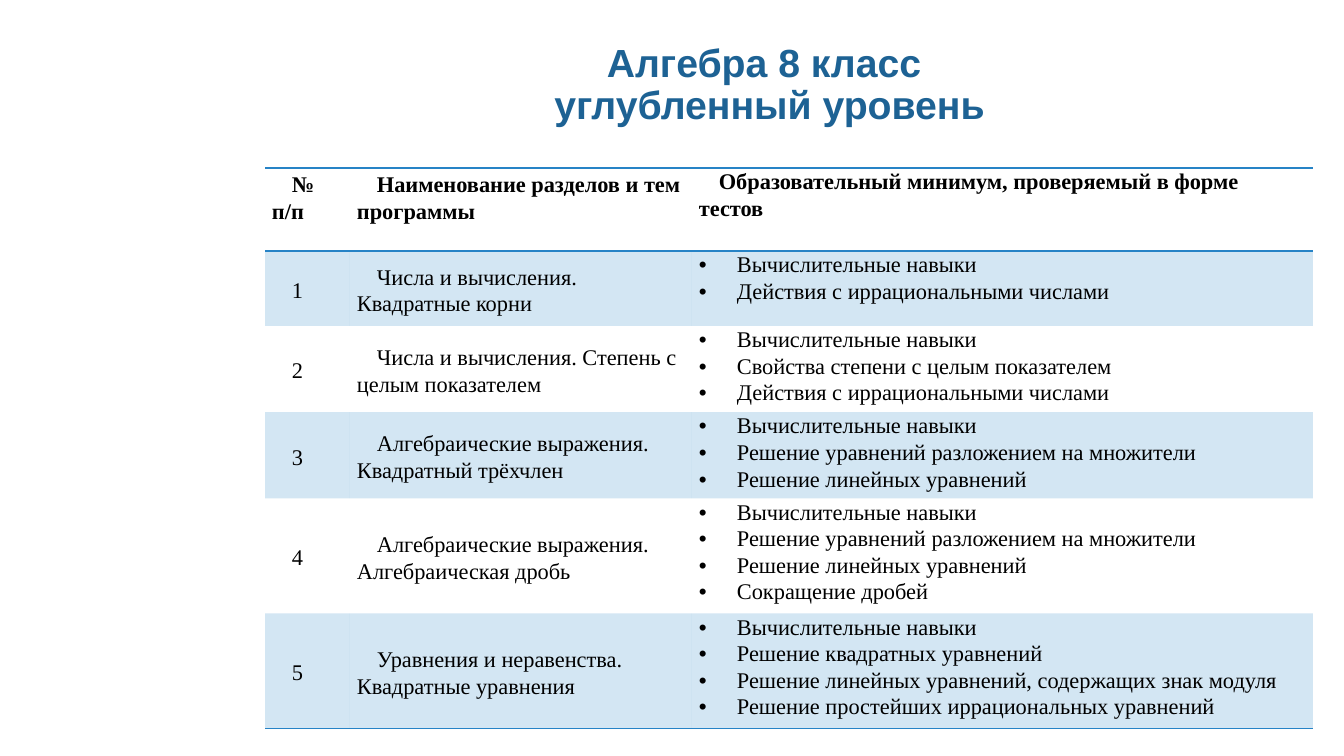
from dataclasses import dataclass

from lxml.etree import SubElement as Sub
from pptx import Presentation
from pptx.dml.color import RGBColor as Rgb
from pptx.enum.text import MSO_ANCHOR as Anchor, PP_ALIGN as Align
from pptx.oxml.ns import qn
from pptx.util import Pt

PX = 9071.43
PLAIN = "{2D5ABB26-0587-4C30-8999-92F81FD0307C}"


@dataclass(frozen=True)
class Theme:
    """Colours, fonts and type sizes of the slide."""
    title: str = "1D6294"
    ink: str = "000000"
    rule: str = "2683C6"
    head_font: str = "Arial"
    body_font: str = "Times New Roman"
    head_size: int = 28
    body_size: int = 16
    tint: int = 20000


THEME = Theme()
TITLE = [("Алгебра 8 класс", 0), ("углубленный уровень", 11)]
HEADS = ["№ п/п", "Наименование разделов и тем программы",
         "Образовательный минимум, проверяемый в форме тестов"]
SKILL = "Вычислительные навыки"
ROOTS = "Действия с иррациональными числами"
SPLIT = "Решение уравнений разложением на множители"
LINE = "Решение линейных уравнений"
TOPICS = [
    ("Числа и вычисления. Квадратные корни", [SKILL, ROOTS]),
    ("Числа и вычисления. Степень с целым показателем",
     [SKILL, "Свойства степени с целым показателем", ROOTS]),
    ("Алгебраические выражения. Квадратный трёхчлен", [SKILL, SPLIT, LINE]),
    ("Алгебраические выражения. Алгебраическая дробь",
     [SKILL, SPLIT, LINE, "Сокращение дробей"]),
    ("Уравнения и неравенства. Квадратные уравнения",
     [SKILL, "Решение квадратных уравнений", LINE + ", содержащих знак модуля",
      "Решение простейших иррациональных уравнений"]),
]
COLS = [85, 342, 621]
ROWS = [83, 75, 80, 80, 106, 106]


def px(count):
    """Turn pixels into EMU."""
    return round(count * PX)


def add_run(para, text, font, size, color, bold):
    """Add one styled run to a paragraph."""
    run = para.add_run()
    run.text = text
    run.font.name, run.font.size, run.font.bold = font, Pt(size), bold
    run.font.color.rgb = Rgb.from_string(color)


def add_paras(frame, count):
    """Yield the given number of paragraphs of a text frame."""
    for at in range(count):
        yield frame.add_paragraph() if at else frame.paragraphs[0]


def indent(para, left, first):
    """Set the left margin and first-line indent of a paragraph."""
    props = para._p.get_or_add_pPr()
    props.set("marL", str(px(left)))
    props.set("indent", str(px(first)))
    return props


def add_title(slide):
    """Add the two-line centred title."""
    box = slide.shapes.add_textbox(px(265), px(36), px(998), px(100))
    frame = box.text_frame
    frame.word_wrap = True
    frame.vertical_anchor = Anchor.MIDDLE
    for para, (text, shift) in zip(add_paras(frame, len(TITLE)), TITLE):
        indent(para, 0, shift)
        para.alignment = Align.CENTER
        para.line_spacing = 0.9
        add_run(para, text, THEME.head_font, THEME.head_size, THEME.title, True)


def fill_cell(cell, lines, bold=False, list_cell=False, anchor=Anchor.MIDDLE):
    """Write lines into a cell, as bullets when it holds a list."""
    for para, text in zip(add_paras(cell.text_frame, len(lines)), lines):
        if list_cell:
            props = indent(para, 38, -38)
            Sub(props, qn("a:buFont"), typeface="Arial")
            Sub(props, qn("a:buChar"), char="•")
        else:
            indent(para, 0, 20)
        para.line_spacing = 1.07
        add_run(para, text, THEME.body_font, THEME.body_size, THEME.ink, bold)
    cell.vertical_anchor = anchor


def style_cell(cell, sides, tinted, top):
    """Set the margins, ruled sides and fill of a cell."""
    cell.margin_left = cell.margin_right = px(7)
    cell.margin_top, cell.margin_bottom = px(top), 0
    props = cell._tc.get_or_add_tcPr()
    for side in sides:
        edge = Sub(props, qn("a:ln" + side), w=str(Pt(1)))
        Sub(Sub(edge, qn("a:solidFill")), qn("a:srgbClr"), val=THEME.rule)
    if tinted:
        cell.fill.solid()
        cell.fill.fore_color.rgb = Rgb.from_string(THEME.rule)
        color = props.find(qn("a:solidFill")).find(qn("a:srgbClr"))
        Sub(color, qn("a:alpha"), val=str(THEME.tint))
    else:
        cell.fill.background()


def add_grid(slide):
    """Add the table of topics and tested skills."""
    frame = slide.shapes.add_table(len(ROWS), len(COLS), px(265), px(168),
                                   px(sum(COLS)), px(sum(ROWS)))
    grid = frame.table
    grid.horz_banding = False
    grid._tbl.tblPr.find(qn("a:tableStyleId")).text = PLAIN
    for parts, sizes, name in ((grid.columns, COLS, "width"),
                               (grid.rows, ROWS, "height")):
        for part, size in zip(parts, sizes):
            setattr(part, name, px(size))
    for col, text in enumerate(HEADS):
        fill_cell(grid.cell(0, col), [text], bold=True, anchor=Anchor.TOP)
    for row, (topic, skills) in enumerate(TOPICS, 1):
        fill_cell(grid.cell(row, 0), [str(row)])
        fill_cell(grid.cell(row, 1), [topic])
        fill_cell(grid.cell(row, 2), skills, list_cell=True, anchor=Anchor.TOP)
    sides = {0: "TB", len(TOPICS): "B"}
    for row in range(len(ROWS)):
        for col in range(len(COLS)):
            style_cell(grid.cell(row, col), sides.get(row, ""),
                       row % 2 == 1, 0 if col == 2 else 3)


def main():
    """Build and save the slide."""
    deck = Presentation()
    deck.slide_width, deck.slide_height = px(1344), px(756)
    slide = deck.slides.add_slide(deck.slide_layouts[6])
    add_title(slide)
    add_grid(slide)
    deck.save("out.pptx")


if __name__ == "__main__":
    main()
